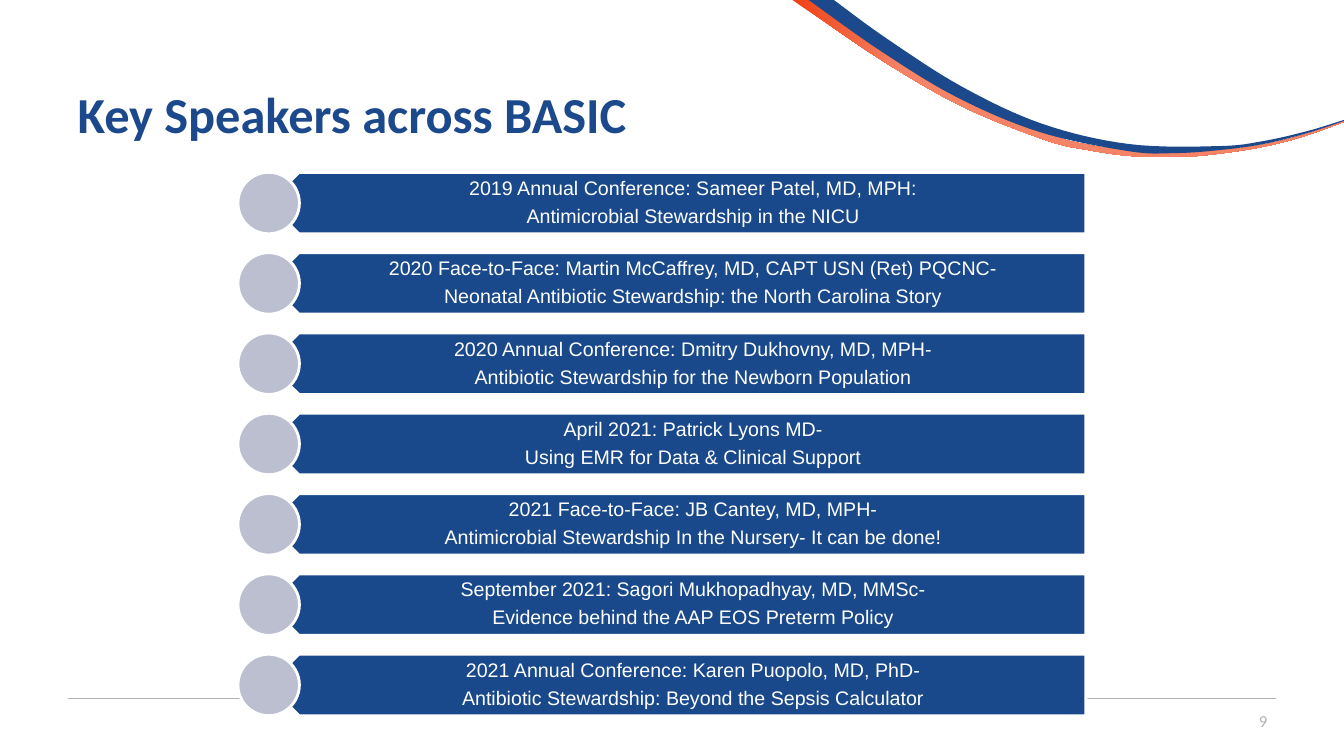
import pptx
import pptx.util
import pptx.dml.color
import pptx.enum.shapes
import pptx.enum.text
import lxml.etree

TITLE = "Key Speakers across BASIC"
PAGE = "9"
TALKS = [
    ("2019 Annual Conference: Sameer Patel, MD, MPH:",
     "Antimicrobial Stewardship in the NICU"),
    ("2020 Face-to-Face: Martin McCaffrey, MD, CAPT USN (Ret) PQCNC-",
     "Neonatal Antibiotic Stewardship: the North Carolina Story"),
    ("2020 Annual Conference: Dmitry Dukhovny, MD, MPH-",
     "Antibiotic Stewardship for the Newborn Population"),
    ("April 2021: Patrick Lyons MD-",
     "Using EMR for Data & Clinical Support"),
    ("2021 Face-to-Face: JB Cantey, MD, MPH-",
     "Antimicrobial Stewardship In the Nursery- It can be done!"),
    ("September 2021: Sagori Mukhopadhyay, MD, MMSc-",
     "Evidence behind the AAP EOS Preterm Policy"),
    ("2021 Annual Conference: Karen Puopolo, MD, PhD-",
     "Antibiotic Stewardship: Beyond the Sepsis Calculator"),
]

# Swoosh edges: upper edge left to right, lower edge right to left
ORANGE = [
    [(8.05, 0), (8.82, .54), (9.58, .99), (10.39, 1.33), (10.81, 1.44),
     (11.25, 1.5), (11.68, 1.52), (12.12, 1.49), (12.56, 1.43),
     (12.99, 1.32), (13.33, 1.2)],
    [(13.33, 1.21), (12.94, 1.35), (12.56, 1.45), (12.13, 1.52),
     (11.69, 1.56), (11.24, 1.55), (10.8, 1.49), (10.37, 1.39),
     (9.55, 1.06), (8.78, .62), (8.04, .12), (7.86, 0)],
]
BLUE = [
    [(8.27, 0), (8.79, .38), (9.54, .86), (10.34, 1.23), (11.2, 1.43),
     (12.09, 1.45), (12.53, 1.4), (12.97, 1.3), (13.33, 1.19)],
    [(13.33, 1.2), (12.97, 1.32), (12.53, 1.43), (12.09, 1.49),
     (11.64, 1.52), (11.19, 1.5), (10.31, 1.31), (9.48, .96),
     (8.71, .49), (8.02, 0)],
]

# Layout in inches
WIDE, HIGH = 13.33, 7.5
EDGE = 0.67
TOP, LAST, SIZE = 1.71, 6.49, 0.61
STEP = (LAST - TOP) / (len(TALKS) - 1)
DOT, BAR, RIGHT = 2.36, 2.66, 10.77
TEXT = 2.82

Inches, Pt = pptx.util.Inches, pptx.util.Pt
SHAPE = pptx.enum.shapes.MSO_SHAPE
ALIGN = pptx.enum.text.PP_ALIGN


def color(code):
    return pptx.dml.color.RGBColor.from_string(code)


def place(x, y, w, h):
    return [Inches(v) for v in (x, y, w, h)]


def smooth(knots, steps=8):
    """Points on a Catmull-Rom curve through the knots."""
    ends = [knots[0], *knots, knots[-1]]
    curve = [knots[0]]
    for a, b, c, d in zip(ends, ends[1:], ends[2:], ends[3:]):
        for i in range(1, steps + 1):
            t = i / steps
            curve.append(tuple(
                max(0, q + t * (r - p) / 2
                    + t * t * (2 * p - 5 * q + 4 * r - s) / 2
                    + t ** 3 * (3 * q - p - 3 * r + s) / 2)
                for p, q, r, s in zip(a, b, c, d)))
    return curve


def swoosh(edges):
    dots = [(Inches(x), Inches(y)) for e in edges for x, y in smooth(e)]
    pen = slide.shapes.build_freeform(*dots[0], scale=1.0)
    pen.add_line_segments(dots[1:], close=True)
    band = pen.convert_to_shape()
    band.shadow.inherit = False
    band.line.fill.background()
    return band


def solid(kind, box, fill):
    shape = slide.shapes.add_shape(kind, *box)
    shape.shadow.inherit = False
    shape.fill.solid()
    shape.fill.fore_color.rgb = color(fill)
    shape.line.color.rgb = color("FFFFFF")
    shape.line.width = Pt(2)
    return shape


def write(shape, lines, font, size, ink, align, pads=(.1, .05, .1, .05)):
    frame = shape.text_frame
    frame.word_wrap = True
    frame.auto_size = pptx.enum.text.MSO_AUTO_SIZE.NONE
    frame.vertical_anchor = pptx.enum.text.MSO_ANCHOR.MIDDLE
    (frame.margin_left, frame.margin_top,
     frame.margin_right, frame.margin_bottom) = place(*pads)
    frame.text = "\n".join(lines)
    for para in frame.paragraphs:
        para.alignment = align
        para.font.name = font
        para.font.size = Pt(size)
        para.font.color.rgb = color(ink)
    return frame.paragraphs


deck = pptx.Presentation()
deck.slide_width, deck.slide_height = Inches(WIDE), Inches(HIGH)
slide = deck.slides.add_slide(deck.slide_layouts[5])

# Corner swoosh
fill = swoosh(ORANGE).fill
fill.gradient()
fill.gradient_angle = 0
for stop, (code, spot) in zip(fill.gradient_stops,
                              [("EF4114", 0), ("F58366", 0.2)]):
    stop.color.rgb = color(code)
    stop.position = spot
fill = swoosh(BLUE).fill
fill.solid()
fill.fore_color.rgb = color("1C498B")

# Footer rule and page number
rule = slide.shapes.add_connector(
    pptx.enum.shapes.MSO_CONNECTOR.STRAIGHT,
    *place(EDGE, 6.93, WIDE - EDGE, 6.93))
rule.line.color.rgb = color("AEB3B7")
rule.line.width = Pt(0.75)
lxml.etree.SubElement(rule._element.spPr,
                      pptx.oxml.ns.qn("a:effectLst"))
page = slide.shapes.add_textbox(*place(9.67, 6.95, 3, 0.4))
write(page, [PAGE], "Calibri", 12, "AEB3B7", ALIGN.RIGHT)

# Title
head = slide.shapes.title
head.left, head.top, head.width, head.height = place(
    EDGE, 0.4, WIDE - 2 * EDGE, 1.45)
write(head, [TITLE], "Calibri", 36, "1C498B", ALIGN.LEFT)[0].font.bold = True

# One bar, label and dot per talk
for row, talk in enumerate(TALKS):
    y = TOP + row * STEP
    bar = solid(SHAPE.PENTAGON, place(BAR, y, RIGHT - BAR, SIZE), "19498B")
    bar.rotation = 180
    label = slide.shapes.add_textbox(*place(TEXT, y, RIGHT - TEXT, SIZE))
    paras = write(label, talk, "Arial", 14, "FFFFFF", ALIGN.CENTER,
                  (.27, .06, .11, .06))
    for para in paras:
        para.line_spacing = 0.9
    paras[1].space_before = Pt(4.9)
    solid(SHAPE.OVAL, place(DOT, y, SIZE, SIZE), "BBBFCF")

deck.save("out.pptx")
